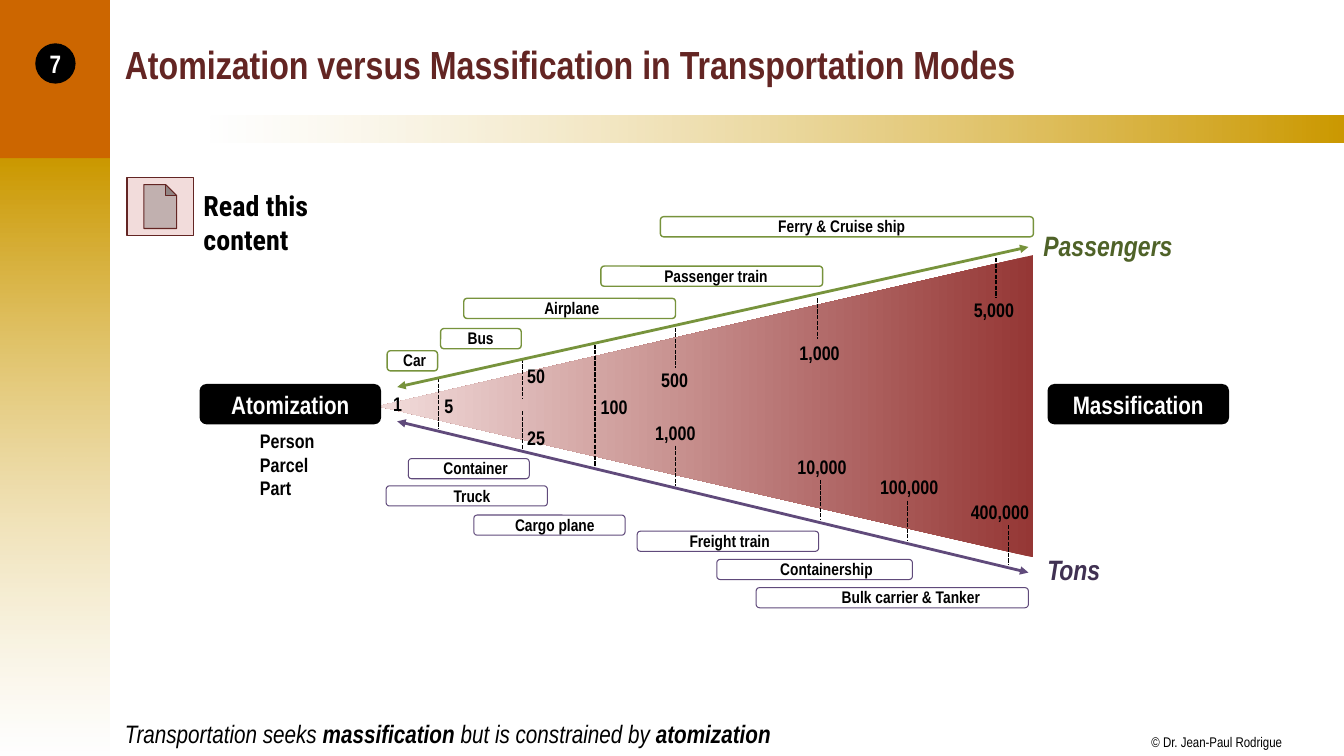
"""Build the slide on atomization versus massification in transportation modes."""
from lxml.etree import SubElement
from pptx import Presentation
from pptx.dml.color import RGBColor
from pptx.enum.dml import MSO_LINE
from pptx.enum.shapes import MSO_CONNECTOR, MSO_SHAPE
from pptx.enum.text import MSO_ANCHOR, MSO_AUTO_SIZE, PP_ALIGN
from pptx.oxml.ns import qn
from pptx.util import Inches, Pt

CELL = Inches(0.01)
COLS, ROWS = 1333, 750
FONT = "Arial Narrow"

BLACK = RGBColor(0x00, 0x00, 0x00)
WHITE = RGBColor(0xFF, 0xFF, 0xFF)
GOLD = RGBColor(0xCC, 0x99, 0x00)
ORANGE = RGBColor(0xCC, 0x66, 0x00)
MAROON = RGBColor(0x63, 0x25, 0x23)
RED = RGBColor(0x95, 0x37, 0x35)
PINK = RGBColor(0xF2, 0xDC, 0xDB)
GREEN = RGBColor(0x77, 0x93, 0x3C)
DARK_GREEN = RGBColor(0x4F, 0x62, 0x28)
PURPLE = RGBColor(0x60, 0x4A, 0x7B)
DARK_PURPLE = RGBColor(0x40, 0x31, 0x52)

# Name, bar (column, row, width), label (column, width)
PASSENGER_MODES = [
    ("Car", (384, 348, 50), (390, 43)),
    ("Bus", (437, 326, 80), (454, 46)),
    ("Airplane", (460, 296, 210), (530, 76)),
    ("Passenger train", (596, 264, 220), (649, 124)),
    ("Ferry & Cruise ship", (655, 215, 370), (762, 148)),
]
FREIGHT_MODES = [
    ("Container", (405, 455, 120), (430, 85)),
    ("Truck", (383, 482, 160), (440, 57)),
    ("Cargo plane", (470, 511, 150), (501, 100)),
    ("Freight train", (632, 527, 180), (674, 101)),
    ("Containership", (711, 555, 194), (764, 113)),
    ("Bulk carrier & Tanker", (750, 583, 270), (825, 159)),
]
# Value, column, row, width
CAPACITIES = [
    ("1", 380, 384, 29), ("5", 431, 386, 29), ("50", 513, 356, 38),
    ("25", 513, 418, 38), ("100", 586, 387, 47), ("500", 646, 360, 47),
    ("1,000", 783, 333, 61), ("5,000", 956, 291, 60),
    ("1,000", 640, 413, 61), ("10,000", 781, 446, 69),
    ("100,000", 863, 466, 78), ("400,000", 953, 491, 78),
]
# Column, row, length
TICKS = [(435, 375, 50), (590, 342, 120)] + [
    (col, row, 40) for col, row in [
        (518, 356), (518, 408), (670, 325), (670, 442), (811, 296),
        (814, 476), (988, 256), (900, 497), (1000, 521)]]


def cells(*counts):
    """Turn counts of grid cells into lengths."""
    return [CELL * n for n in counts]


def style(p, size, color, bold=None, italic=None, font=FONT):
    """Set the font of a whole paragraph."""
    f = p.font
    f.name, f.size, f.bold, f.italic = font, Pt(size), bold, italic
    f.color.rgb = color


def add_text(s, lines, at, size, color=BLACK, bold=True, italic=None,
             font=FONT, wrap=False):
    """Add a text box with one paragraph for each line and return its frame."""
    tf = s.shapes.add_textbox(*cells(*at)).text_frame
    tf.word_wrap = wrap
    tf.auto_size = MSO_AUTO_SIZE.SHAPE_TO_FIT_TEXT
    tf.text = "\n".join(lines)
    for p in tf.paragraphs:
        style(p, size, color, bold, italic, font)
    return tf


def add_shape(s, kind, at, fill=None, line=None, width=0.75):
    """Add a flat preset shape, with an outline if a line colour is given."""
    sp = s.shapes.add_shape(kind, *cells(*at))
    sp.shadow.inherit = False
    if fill is not None:
        sp.fill.solid()
        sp.fill.fore_color.rgb = fill
    if line is None:
        sp.line.fill.background()
    else:
        sp.line.color.rgb = line
        sp.line.width = Pt(width)
    return sp


def add_gradient(s, kind, at, stops, angle):
    """Add a shape whose fill runs through (colour, opacity percent) stops."""
    sp = add_shape(s, kind, at)
    sp.fill.gradient()
    sp.fill.gradient_angle = angle
    for i, (stop, (color, opacity)) in enumerate(
            zip(sp.fill.gradient_stops, stops)):
        stop.position = i
        stop.color.rgb = color
    colors = sp.element.spPr.findall(".//" + qn("a:gs") + "/" + qn("a:srgbClr"))
    for node, (_, opacity) in zip(colors, stops):
        if opacity < 100:
            SubElement(node, qn("a:alpha")).set("val", str(opacity * 1000))
    return sp


def add_badge(s, kind, text, at):
    """Add a black shape with white centred text."""
    tf = add_shape(s, kind, at, BLACK).text_frame
    tf.margin_left = tf.margin_right = 0
    tf.word_wrap = False
    tf.vertical_anchor = MSO_ANCHOR.MIDDLE
    p = tf.paragraphs[0]
    p.text = text
    p.alignment = PP_ALIGN.CENTER
    style(p, 18, WHITE, True)


def add_line(s, ends, color, width, dashed=False, arrows=False):
    """Add a straight line, dashed or with arrowheads at both ends."""
    line = s.shapes.add_connector(MSO_CONNECTOR.STRAIGHT, *cells(*ends))
    line.line.color.rgb = color
    line.line.width = Pt(width)
    if dashed:
        line.line.dash_style = MSO_LINE.SQUARE_DOT
    if arrows:
        ln = line.line._get_or_add_ln()
        for end in ("a:headEnd", "a:tailEnd"):
            SubElement(ln, qn(end)).set("type", "triangle")
    SubElement(line.element.spPr, qn("a:effectLst"))


def add_modes(s, modes, color, width):
    """Add the capacity range bar and the label of each mode."""
    for name, (col, row, length), (label_col, label_width) in modes:
        add_shape(s, MSO_SHAPE.ROUNDED_RECTANGLE, (col, row, length, 20),
                  WHITE, color, width)
        add_text(s, [name], (label_col, row - 5.5, label_width, 30), 12)


def add_frame(s):
    """Add the side band, the title bar, the title and the footer."""
    add_gradient(s, MSO_SHAPE.RECTANGLE, (-2, 157, 111, 593),
                 [(GOLD, 100), (WHITE, 51)], 270)
    add_gradient(s, MSO_SHAPE.RECTANGLE, (209, 115, 1125, 26),
                 [(WHITE, 50), (GOLD, 100)], 0)
    tf = add_text(s, ["© Dr. Jean-Paul Rodrigue"], (1142, 728, 131, 17), 10,
                  bold=False)
    tf.margin_left = tf.margin_right = tf.margin_top = tf.margin_bottom = 0
    add_shape(s, MSO_SHAPE.RECTANGLE, (-2, -1, 111, 158), ORANGE)
    tf = add_text(s, ["Atomization versus Massification in Transportation Modes"],
                  (114, 11, 1197, 104), 28, MAROON, wrap=True)
    tf.auto_size = MSO_AUTO_SIZE.NONE
    tf.vertical_anchor = MSO_ANCHOR.MIDDLE
    add_badge(s, MSO_SHAPE.OVAL, "7", (35, 43, 40, 40))


def add_conclusion(s):
    """Add the closing sentence with its two key words in bold."""
    tf = add_text(s, [""], (114, 708, 691, 40), 18, bold=None, italic=True)
    for text, bold in [("Transportation seeks ", False), ("massification", True),
                       (" but is constrained by ", False), ("atomization", True)]:
        r = tf.paragraphs[0].add_run()
        r.text = text
        r.font.bold = bold


def main():
    """Build and save the slide."""
    prs = Presentation()
    prs.slide_width, prs.slide_height = cells(COLS, ROWS)
    s = prs.slides.add_slide(prs.slide_layouts[6])
    add_frame(s)
    add_shape(s, MSO_SHAPE.ACTION_BUTTON_DOCUMENT, (126, 176, 66, 58), PINK, MAROON)
    add_text(s, ["Read this content"], (192, 182, 186, 44), 20,
             font="Roboto Condensed", wrap=True)
    wedge = add_gradient(s, MSO_SHAPE.ISOSCELES_TRIANGLE, (550, 78, 300, 650),
                         [(RED, 100), (PINK, 100)], 90)
    wedge.rotation = 270
    add_modes(s, PASSENGER_MODES, GREEN, 1)
    add_modes(s, FREIGHT_MODES, PURPLE, 0.75)
    for value, col, row, width in CAPACITIES:
        add_text(s, [value], (col, row, width, 34), 14)
    for col, row, length in TICKS:
        add_line(s, (col, row, col, row + length), BLACK, 1, dashed=True)
    for text, col in [("Atomization", 198), ("Massification", 1039)]:
        add_badge(s, MSO_SHAPE.ROUNDED_RECTANGLE, text, (col, 381, 180, 40))
    add_text(s, ["Person", "Parcel", "Part"], (248, 421, 75, 81), 14)
    add_line(s, (394, 384, 1020, 245), GREEN, 2, arrows=True)
    add_line(s, (394, 418, 1020, 568), PURPLE, 2, arrows=True)
    add_text(s, ["Passengers"], (1025, 222, 149, 44), 20, DARK_GREEN, italic=True)
    add_text(s, ["Tons"], (1029, 543, 73, 44), 20, DARK_PURPLE, italic=True)
    add_conclusion(s)
    prs.save("out.pptx")


if __name__ == "__main__":
    main()
